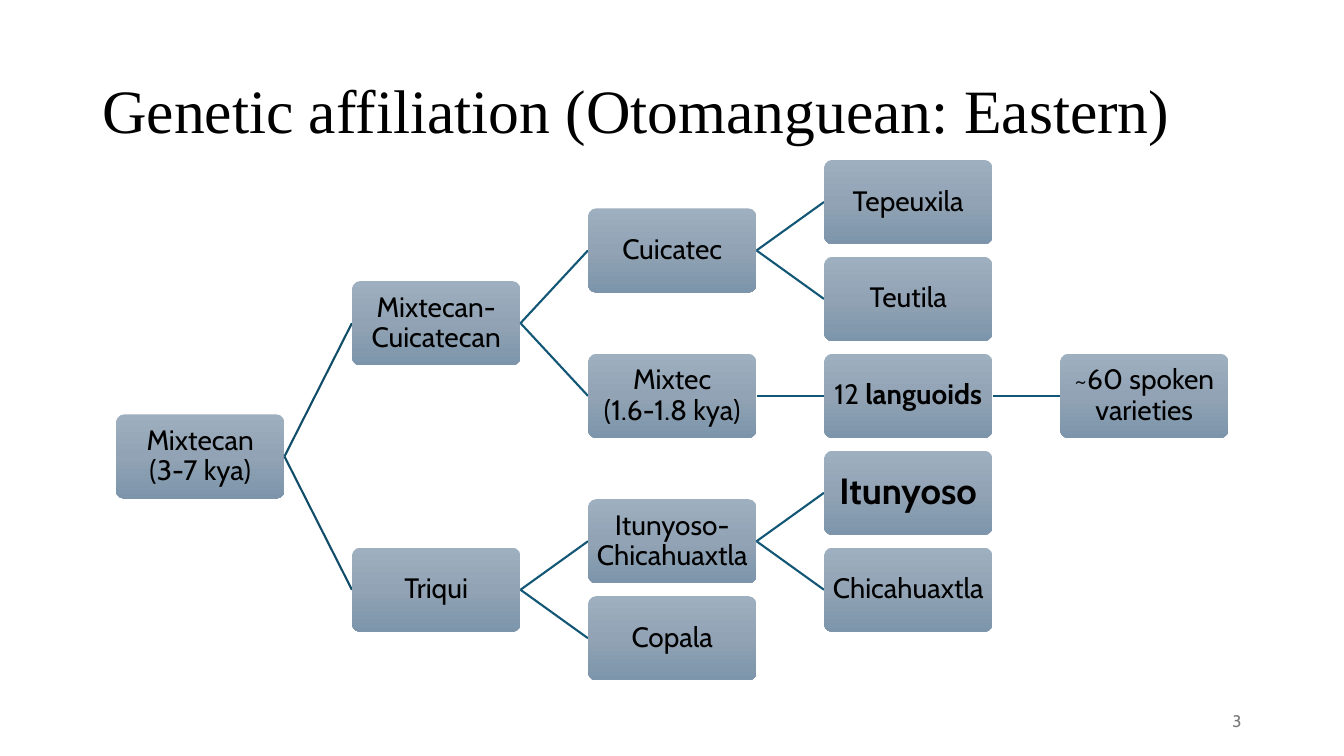
"""Build a slide with the Mixtecan language family tree."""
from copy import deepcopy
from dataclasses import dataclass

from lxml import etree
from pptx import Presentation
from pptx.dml.color import RGBColor
from pptx.enum.shapes import MSO_CONNECTOR, MSO_SHAPE
from pptx.enum.text import MSO_ANCHOR, PP_ALIGN
from pptx.oxml.ns import qn
from pptx.util import Pt

ROUNDED = MSO_SHAPE.ROUNDED_RECTANGLE
STRAIGHT = MSO_CONNECTOR.STRAIGHT
MIDDLE = MSO_ANCHOR.MIDDLE
LEFT, CENTER, RIGHT = PP_ALIGN.LEFT, PP_ALIGN.CENTER, PP_ALIGN.RIGHT

TREE_LEFT, TREE_TOP = 82.8, 114.2
COL_STEP, ROW_STEP = 168.6, 69.24
BOX_W, BOX_H = 120.4, 60.2
GRADIENT = [(0, "9EAFBF"), (0.5, "91A3B4"), (1, "7C95AB")]
LINE_COLORS = ["114D68", "135776", "135776", "135776"]


@dataclass(frozen=True)
class Run:
    text: str
    size: float = 20
    bold: bool = False
    name: str = "Cabin"
    color: str = "000000"


@dataclass(frozen=True)
class Node:
    runs: tuple[Run, ...]
    children: tuple["Node", ...] = ()
    leaf_row: float = 0

    @property
    def row(self) -> float:
        """Return the row, centred on the children if there are any."""
        if not self.children:
            return self.leaf_row
        return sum(child.row for child in self.children) / len(self.children)


def branch(text: str, *children: Node) -> Node:
    """Return a plain node with children."""
    return Node((Run(text),), children)


def leaf(row: float, *runs: Run) -> Node:
    """Return a node without children at the given row."""
    return Node(runs, leaf_row=row)


TREE = branch(
    "Mixtecan\v(3-7 kya)",
    branch(
        "Mixtecan-Cuicatecan",
        branch("Cuicatec", leaf(0, Run("Tepeuxila")), leaf(1, Run("Teutila"))),
        branch(
            "Mixtec\v(1.6-1.8 kya)",
            Node((Run("12 "), Run("languoids", bold=True)),
                 (leaf(2, Run("~60 spoken varieties")),)),
        ),
    ),
    branch(
        "Triqui",
        branch("Itunyoso-Chicahuaxtla",
               leaf(3, Run("Itunyoso", 26, True)), leaf(4, Run("Chicahuaxtla"))),
        leaf(4.5, Run("Copala")),
    ),
)


def rgb(value: str) -> RGBColor:
    """Turn a hex string into a colour."""
    return RGBColor.from_string(value)


def write(sp, runs: tuple[Run, ...], align, spacing: float = 0.9, inset: float | None = None) -> None:
    """Write one paragraph of runs into a shape."""
    tf = sp.text_frame
    frame_format = {"word_wrap": True, "vertical_anchor": MIDDLE}
    if inset is not None:
        for side in ("left", "top", "right", "bottom"):
            frame_format[f"margin_{side}"] = Pt(inset)
    for key, value in frame_format.items():
        setattr(tf, key, value)
    p = tf.paragraphs[0]
    p.alignment, p.line_spacing = align, spacing
    for run in runs:
        for i, line in enumerate(run.text.split("\v")):
            if i:
                p.add_line_break()
            r = p.add_run()
            r.text = line
            font_format = {"name": run.name, "size": Pt(run.size), "bold": run.bold}
            for key, value in font_format.items():
                setattr(r.font, key, value)
            r.font.color.rgb = rgb(run.color)


def fill_gradient(sp) -> None:
    """Fill a shape with the vertical three-stop gradient."""
    sp.fill.gradient()
    sp.fill.gradient_angle = 270
    stops = sp._element.spPr.find(".//" + qn("a:gsLst"))
    stops.append(deepcopy(stops[-1]))
    for stop, (position, color) in zip(sp.fill.gradient_stops, GRADIENT):
        stop.position = position
        stop.color.rgb = rgb(color)


def corner(node: Node, depth: int) -> tuple[float, float]:
    """Return the left and top of a node's box."""
    return TREE_LEFT + depth * COL_STEP, TREE_TOP + node.row * ROW_STEP


def draw_link(s, parent: Node, child: Node, depth: int) -> None:
    """Connect a parent's right edge with a child's left edge."""
    x1, y1 = corner(parent, depth)
    x2, y2 = corner(child, depth + 1)
    line = s.shapes.add_connector(
        STRAIGHT, Pt(x1 + BOX_W), Pt(y1 + BOX_H / 2), Pt(x2), Pt(y2 + BOX_H / 2))
    line.line.width = Pt(1.5)
    line.line.color.rgb = rgb(LINE_COLORS[depth])
    etree.SubElement(line._element.spPr, qn("a:effectLst"))


def draw_node(s, node: Node, depth: int = 0) -> None:
    """Draw a node and everything below it."""
    x, y = corner(node, depth)
    sp = s.shapes.add_shape(ROUNDED, Pt(x), Pt(y), Pt(BOX_W), Pt(BOX_H))
    sp.adjustments[0] = 0.1
    sp.shadow.inherit = False
    sp.line.fill.background()
    fill_gradient(sp)
    write(sp, node.runs, CENTER, inset=2.6)
    for child in node.children:
        draw_link(s, node, child, depth)
        draw_node(s, child, depth + 1)


def main() -> None:
    """Build and save the slide."""
    prs = Presentation()
    prs.slide_width, prs.slide_height = Pt(960), Pt(540)
    s = prs.slides.add_slide(prs.slide_layouts[6])
    title = s.shapes.add_textbox(Pt(66), Pt(28.75), Pt(828), Pt(104.4))
    write(title, (Run("Genetic affiliation (Otomanguean: Eastern)", 44,
                      name="Times New Roman"),), LEFT)
    draw_node(s, TREE)
    number = s.shapes.add_textbox(Pt(678), Pt(500.5), Pt(216), Pt(28.75))
    write(number, (Run("3", 12, color="797979"),), RIGHT, 1.0)
    prs.save("out.pptx")


if __name__ == "__main__":
    main()
